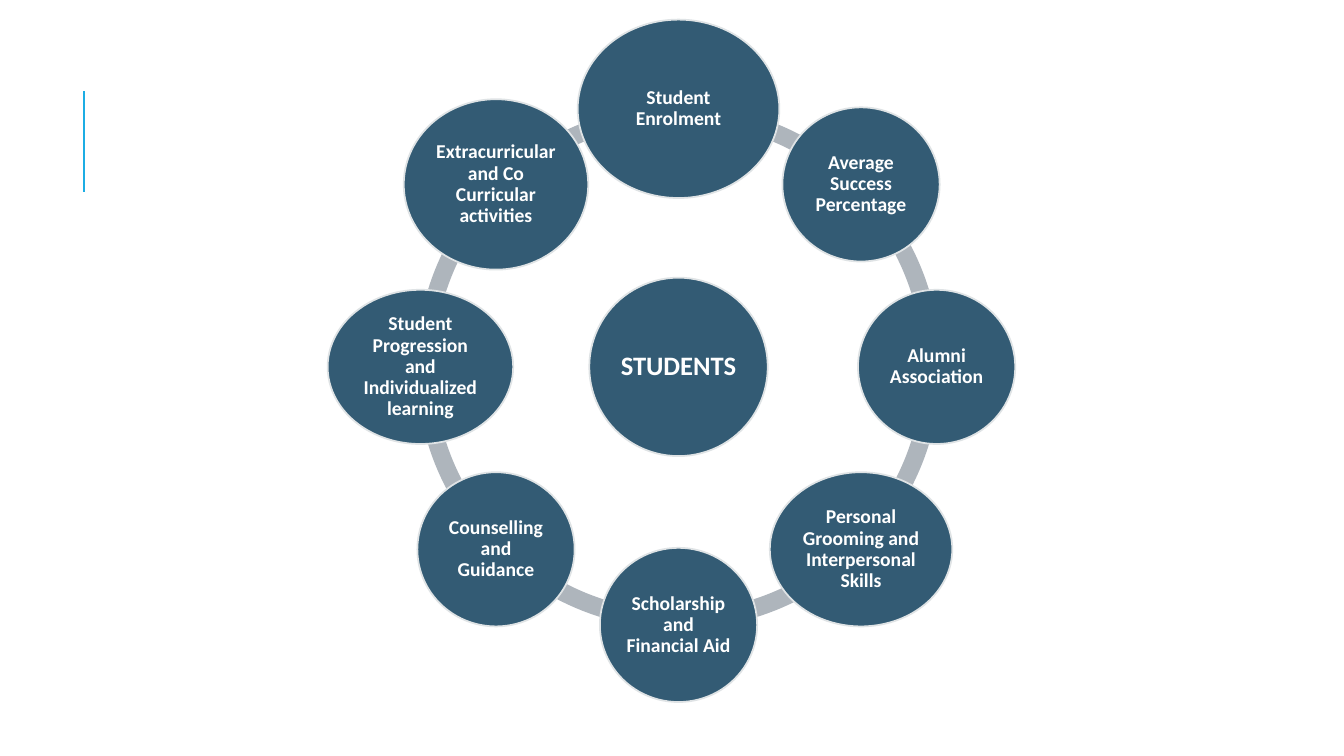
"""Build a slide with a ring of eight student topics around a hub."""
from math import cos, radians, sin

from lxml.etree import SubElement
from pptx import Presentation
from pptx.dml.color import RGBColor
from pptx.enum.shapes import MSO_CONNECTOR, MSO_SHAPE
from pptx.enum.text import MSO_ANCHOR, PP_ALIGN
from pptx.oxml.ns import qn
from pptx.util import Inches, Pt

NAVY = RGBColor(0x33, 0x5B, 0x74)
PALE = RGBColor(0xDF, 0xE3, 0xE5)
GREY = RGBColor(0xAE, 0xB5, 0xBC)
CYAN = RGBColor(0x1C, 0xAD, 0xE4)
WHITE = RGBColor(0xFF, 0xFF, 0xFF)

MID_X, MID_Y = 6.73, 3.64
RING = 5.2
ORBIT = 2.56
TURN = 27

TOPICS = [
    ("Student Enrolment", 2, 1.77),
    ("Average Success Percentage", 1.56, 1.53),
    ("Alumni Association", 1.56, 1.53),
    ("Personal Grooming and Interpersonal Skills", 1.81, 1.53),
    ("Scholarship and Financial Aid", 1.56, 1.53),
    ("Counselling and Guidance", 1.56, 1.53),
    ("Student Progression and Individualized learning", 1.84, 1.53),
    ("Extracurricular and Co Curricular activities", 1.83, 1.69),
]

deck = Presentation()
deck.slide_width, deck.slide_height = Inches(13.33), Inches(7.5)
slide = deck.slides.add_slide(deck.slide_layouts[6])
shapes = slide.shapes


def place(kind, x, y, width, height, fill):
    """Add a filled shape centred on a point."""
    shape = shapes.add_shape(kind, Inches(x - width / 2), Inches(y - height / 2),
                             Inches(width), Inches(height))
    shape.shadow.inherit = False
    shape.fill.solid()
    shape.fill.fore_color.rgb = fill
    shape.line.fill.background()
    return shape


def add_node(label, x, y, width, height, size, inset):
    """Add a labelled ellipse."""
    node = place(MSO_SHAPE.OVAL, x, y, width, height, NAVY)
    node.line.color.rgb = PALE
    node.line.width = Pt(1.25)
    frame = node.text_frame
    frame.text = label
    frame.word_wrap = True
    frame.vertical_anchor = MSO_ANCHOR.MIDDLE
    frame.margin_left = frame.margin_right = Inches(inset)
    frame.margin_top = frame.margin_bottom = Inches(inset)
    para = frame.paragraphs[0]
    para.alignment = PP_ALIGN.CENTER
    para.line_spacing = 0.9
    font = para.runs[0].font
    font.name, font.size, font.bold = "Calibri", Pt(size), True
    font.color.rgb = WHITE


rule = shapes.add_connector(MSO_CONNECTOR.STRAIGHT, Inches(0.83), Inches(1.9),
                            Inches(0.83), Inches(0.9))
rule.line.color.rgb = CYAN
rule.line.width = Pt(1.5)
SubElement(rule._element.spPr, qn("a:effectLst"))

for step in range(len(TOPICS)):
    arc = place(MSO_SHAPE.BLOCK_ARC, MID_X, MID_Y, RING, RING, GREY)
    arc.adjustments[0] = step * TURN
    arc.adjustments[1] = (step + 1) % len(TOPICS) * TURN
    arc.adjustments[2] = 0.034

add_node("STUDENTS", MID_X, MID_Y, 1.77, 1.77, 19, 0.03)
for step, (label, width, height) in enumerate(TOPICS):
    angle = radians(step * 360 / len(TOPICS) - 90)
    add_node(label, MID_X + ORBIT * cos(angle), MID_Y + ORBIT * sin(angle),
             width, height, 14, 0.02)

deck.save("out.pptx")
